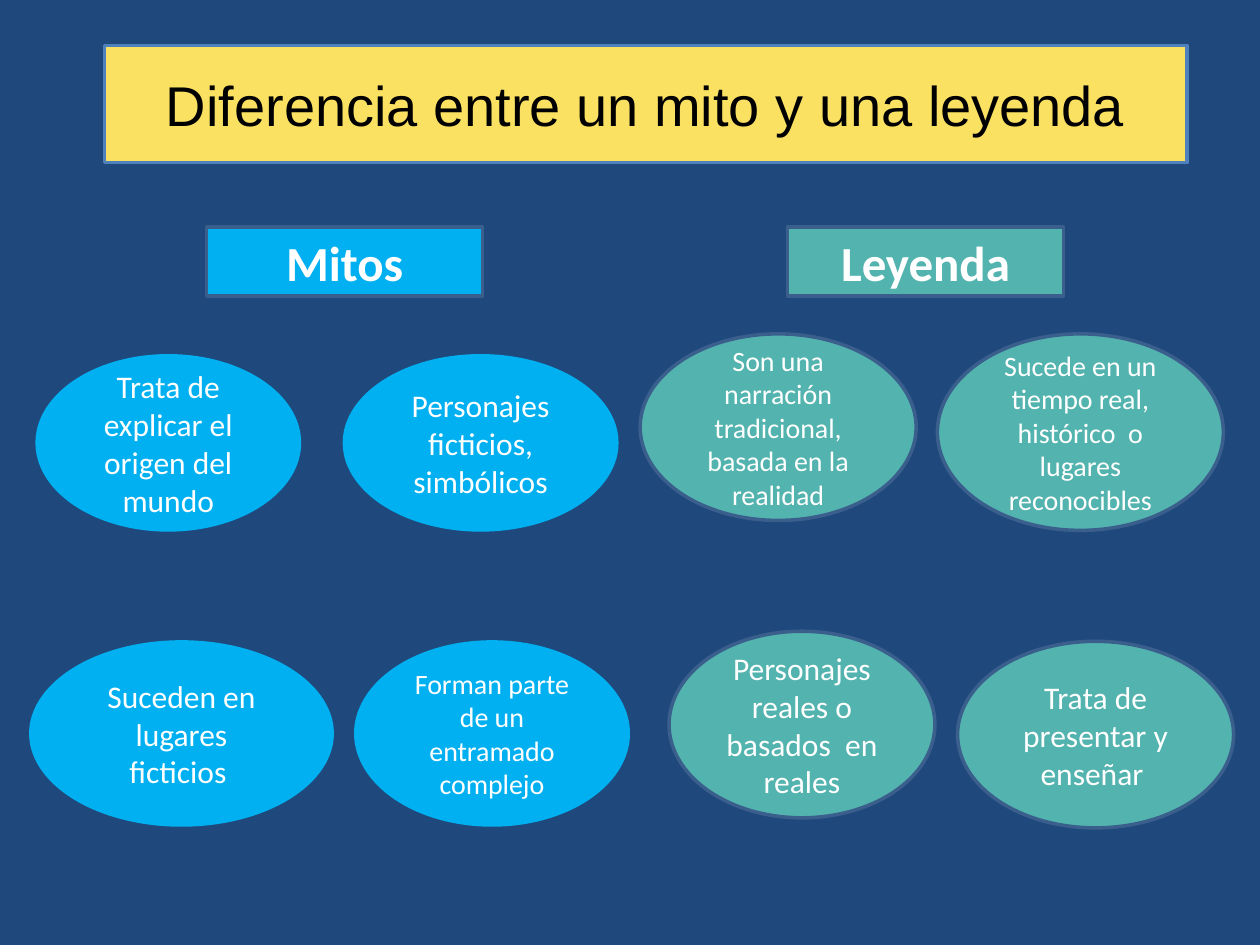
from pptx import Presentation
from pptx.dml.color import RGBColor
from pptx.enum.shapes import MSO_SHAPE as Shape
from pptx.enum.text import MSO_ANCHOR as Anchor, PP_ALIGN as Align
from pptx.util import Pt

NAVY = RGBColor(0x1F, 0x49, 0x7D)
YELLOW = RGBColor(0xFA, 0xE1, 0x62)
BLUE = RGBColor(0x4F, 0x81, 0xBD)
STEEL = RGBColor(0x3A, 0x5F, 0x8C)
CYAN = RGBColor(0x00, 0xB0, 0xF0)
TEAL = RGBColor(0x53, 0xB3, 0xAE)
BLACK = RGBColor(0, 0, 0)
WHITE = RGBColor(0xFF, 0xFF, 0xFF)

TITLE = {"name": "Arial", "size": Pt(32), "bold": False}
HEAD = {"name": "Calibri", "size": Pt(28), "bold": True}
BODY = {"name": "Calibri", "size": Pt(18), "bold": False}
SMALL = {**BODY, "size": Pt(16)}

# Each idea: text, font, then left, top, width, height within its column
MYTHS = [
    ("Trata de explicar el origen del mundo", BODY, 3.6, 72.7, 151.9, 101.5),
    ("Personajes ficticios, simbólicos", BODY, 179.2, 72.7, 157.7, 101.5),
    ("Suceden en lugares ficticios ", BODY, 0, 236.2, 174.2, 106.6),
    ("Forman parte de un entramado complejo", SMALL, 185.7, 236.2, 157.7, 106.6),
]
LEGENDS = [
    ("Son una narración tradicional, basada en la realidad", SMALL,
     0, 61.2, 157.7, 106.6),
    ("Sucede en un tiempo real, histórico  o lugares reconocibles", SMALL,
     169.9, 61.2, 163.4, 112.3),
    ("Personajes reales o basados  en reales", BODY, 16.5, 231.1, 151.9, 106.6),
    ("Trata de presentar y enseñar ", BODY, 181.4, 236.9, 157.7, 106.6),
]


def add_label(slide, kind, box, text, font, fill, line=None, color=WHITE):
    """Add a filled shape with centred text; no line colour means no outline."""
    shape = slide.shapes.add_shape(kind, *map(Pt, box))
    shape.shadow.inherit = False
    shape.fill.solid()
    shape.fill.fore_color.rgb = fill
    if line is None:
        shape.line.fill.background()
    else:
        shape.line.color.rgb = line
        shape.line.width = Pt(2)
    frame = shape.text_frame
    frame.word_wrap = True
    frame.vertical_anchor = Anchor.MIDDLE
    para = frame.paragraphs[0]
    para.alignment = Align.CENTER
    run = para.add_run()
    run.text = text
    for key, value in font.items():
        setattr(run.font, key, value)
    run.font.color.rgb = color


def add_title(slide, box):
    add_label(slide, Shape.RECTANGLE, box, "Diferencia entre un mito y una leyenda",
              TITLE, YELLOW, BLUE, BLACK)


def add_column(slide, left, top, name, inset, ideas, fill, line=None):
    """Add a heading, inset from the column's left, and its ideas in ovals."""
    for text, font, x, y, width, height in ideas:
        add_label(slide, Shape.OVAL, (left + x, top + y, width, height),
                  text, font, fill, line)
    add_label(slide, Shape.RECTANGLE, (left + inset, top, 157.7, 39.6),
              name, HEAD, fill, STEEL)


def main():
    deck = Presentation()
    deck.slide_width, deck.slide_height = Pt(720), Pt(540)
    slide = deck.slides.add_slide(deck.slide_layouts[6])
    back = slide.background.fill
    back.solid()
    back.fore_color.rgb = NAVY
    add_title(slide, (59.8, 26, 618.5, 67))
    add_column(slide, 16.6, 129.6, "Mitos", 101.5, MYTHS, CYAN)
    add_column(slide, 365.8, 129.6, "Leyenda", 84.2, LEGENDS, TEAL, STEEL)
    deck.save("out.pptx")


if __name__ == "__main__":
    main()
